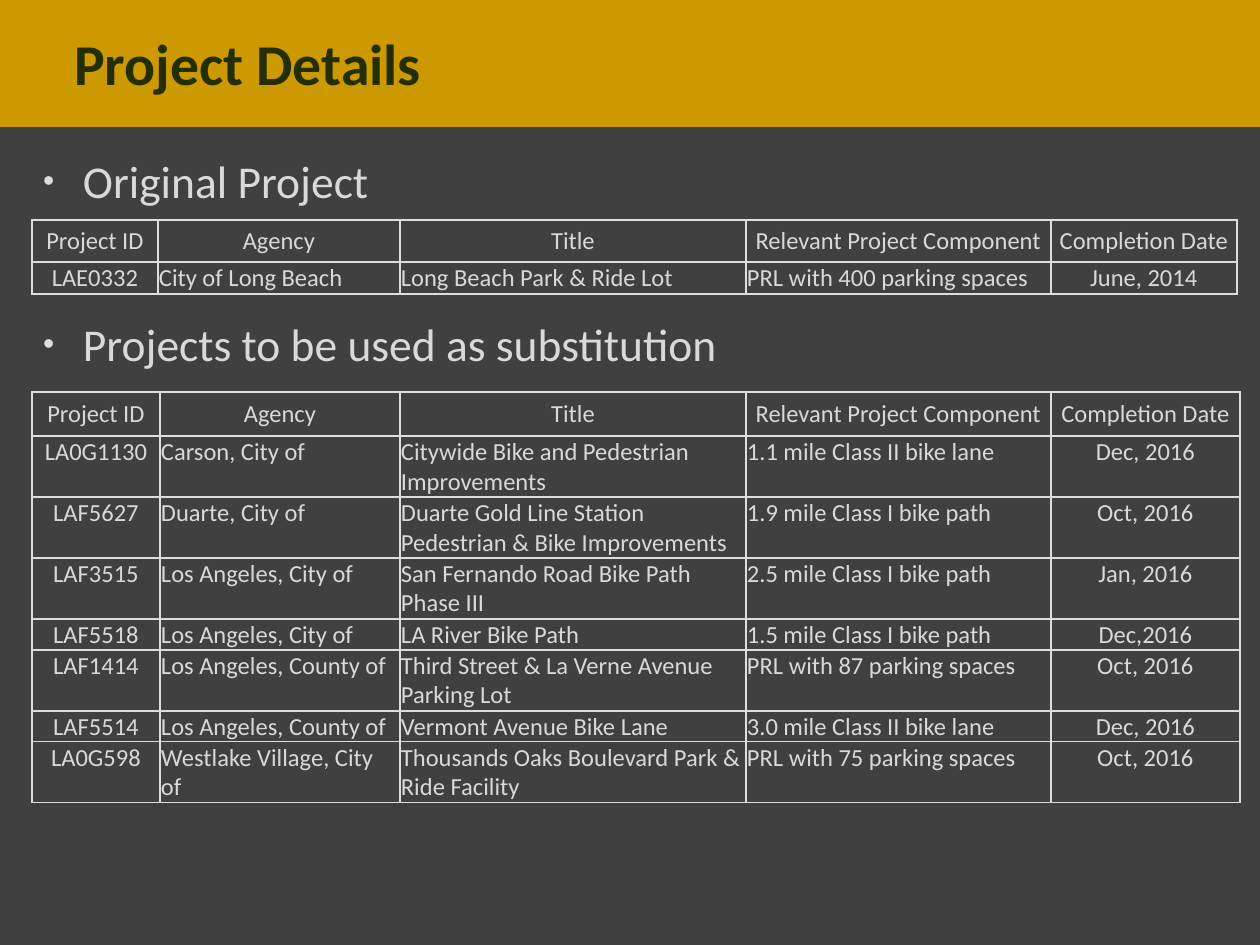
from dataclasses import dataclass

from lxml.etree import SubElement
from pptx import Presentation
from pptx.dml.color import RGBColor as Rgb
from pptx.enum.shapes import MSO_SHAPE as Preset
from pptx.enum.text import MSO_ANCHOR as Anchor, PP_ALIGN as Align
from pptx.oxml.ns import qn
from pptx.util import Pt

EMU_PER_PX = 914400 // 126


@dataclass(frozen=True)
class Theme:
    font: str = "Calibri"
    background: str = "404040"
    band: str = "CC9900"
    heading: str = "242E03"
    body: str = "D9D9D9"
    rule: str = "DDDDDD"
    heading_size: int = 33
    bullet_size: int = 26
    cell_size: int = 14
    rule_width: int = 1


@dataclass(frozen=True)
class ProjectTable:
    left: int
    top: int
    columns: tuple[int, ...]
    heights: tuple[int, ...]
    projects: tuple[tuple[str, ...], ...]


THEME = Theme()
HEADER = ("Project ID", "Agency", "Title", "Relevant Project Component", "Completion Date")
CENTERED_COLUMNS = (0, 4)
ONE_LINE, TWO_LINES = 31, 61

ORIGINAL = ProjectTable(
    32, 220, (126, 242, 346, 305, 186), (42, 32),
    (("LAE0332", "City of Long Beach", "Long Beach Park & Ride Lot",
      "PRL with 400 parking spaces", "June, 2014"),),
)
SUBSTITUTES = ProjectTable(
    32, 392, (128, 240, 346, 305, 189),
    (44, TWO_LINES, TWO_LINES, TWO_LINES, ONE_LINE, TWO_LINES, ONE_LINE, TWO_LINES),
    (
        ("LA0G1130", "Carson, City of", "Citywide Bike and Pedestrian Improvements",
         "1.1 mile Class II bike lane", "Dec, 2016"),
        ("LAF5627", "Duarte, City of", "Duarte Gold Line Station Pedestrian & Bike Improvements",
         "1.9 mile Class I bike path", "Oct, 2016"),
        ("LAF3515", "Los Angeles, City of", "San Fernando Road Bike Path Phase III",
         "2.5 mile Class I bike path", "Jan, 2016"),
        ("LAF5518", "Los Angeles, City of", "LA River Bike Path",
         "1.5 mile Class I bike path", "Dec,2016"),
        ("LAF1414", "Los Angeles, County of", "Third Street & La Verne Avenue Parking Lot",
         "PRL with 87 parking spaces", "Oct, 2016"),
        ("LAF5514", "Los Angeles, County of", "Vermont Avenue Bike Lane",
         "3.0 mile Class II bike lane", "Dec, 2016"),
        ("LA0G598", "Westlake Village, City of", "Thousands Oaks Boulevard Park & Ride Facility",
         "PRL with 75 parking spaces", "Oct, 2016"),
    ),
)


def px(length: int) -> int:
    return length * EMU_PER_PX


def color(value: str) -> Rgb:
    return Rgb.from_string(value)


def write(paragraph, text: str, *, size: int, fill: str = THEME.body, bold: bool = False,
          align: Align = Align.LEFT, before: int = 0) -> None:
    paragraph.alignment = align
    paragraph.space_before = Pt(before)
    run = paragraph.add_run()
    run.text = text
    run.font.name = THEME.font
    run.font.size = Pt(size)
    run.font.bold = bold
    run.font.color.rgb = color(fill)


def add_bullet(paragraph, indent: int) -> None:
    properties = paragraph._p.get_or_add_pPr()
    properties.set("marL", str(px(indent)))
    properties.set("indent", str(-px(indent)))
    bullet_color = SubElement(properties, qn("a:buClr"))
    SubElement(bullet_color, qn("a:srgbClr"), val=THEME.rule)
    SubElement(properties, qn("a:buSzPct"), val="70000")
    SubElement(properties, qn("a:buFont"), typeface="Arial")
    SubElement(properties, qn("a:buChar"), char="•")


def set_margins(box, left: int, top: int, right: int, bottom: int) -> None:
    box.margin_left, box.margin_top = px(left), px(top)
    box.margin_right, box.margin_bottom = px(right), px(bottom)


def add_borders(cell) -> None:
    properties = cell._tc.get_or_add_tcPr()
    for position, side in enumerate(("lnL", "lnR", "lnT", "lnB")):
        border = SubElement(properties, qn(f"a:{side}"), w=str(Pt(THEME.rule_width)))
        fill = SubElement(border, qn("a:solidFill"))
        SubElement(fill, qn("a:srgbClr"), val=THEME.rule)
        properties.insert(position, border)


def draw_table(slide, spec_table: ProjectTable) -> None:
    rows = (HEADER, *spec_table.projects)
    table = slide.shapes.add_table(
        len(rows), len(HEADER), px(spec_table.left), px(spec_table.top),
        px(sum(spec_table.columns)), px(sum(spec_table.heights))).table
    table.first_row = table.horz_banding = False
    for column, width in zip(table.columns, spec_table.columns):
        column.width = px(width)
    for row_index, (row, height) in enumerate(zip(rows, spec_table.heights)):
        table.rows[row_index].height = px(height)
        is_header = row_index == 0
        for column_index, text in enumerate(row):
            cell = table.cell(row_index, column_index)
            set_margins(cell, 1, 1, 1, 0)
            cell.vertical_anchor = Anchor.MIDDLE if is_header else Anchor.TOP
            cell.fill.background()
            add_borders(cell)
            centered = is_header or column_index in CENTERED_COLUMNS
            write(cell.text_frame.paragraphs[0], text, size=THEME.cell_size,
                  align=Align.CENTER if centered else Align.LEFT)


def draw_heading(slide) -> None:
    band = slide.shapes.add_shape(Preset.RECTANGLE, 0, 0, px(1260), px(126))
    band.shadow.inherit = False
    band.fill.solid()
    band.fill.fore_color.rgb = color(THEME.band)
    band.line.color.rgb = color(THEME.band)
    band.line.width = Pt(0.75)

    title = slide.shapes.title
    title._element.addprevious(band._element)
    title.left, title.top, title.width, title.height = px(63), px(23), px(1197), px(94)
    frame = title.text_frame
    frame.vertical_anchor = Anchor.TOP
    set_margins(frame, 11, 5, 11, 5)
    write(frame.paragraphs[0], "Project Details", size=THEME.heading_size,
          fill=THEME.heading, bold=True)


def draw_bullets(slide) -> None:
    frame = slide.shapes.add_textbox(px(32), px(148), px(1207), px(683)).text_frame
    frame.word_wrap = True
    set_margins(frame, 11, 5, 11, 5)
    sections = (("Original Project", 0), ("Projects to be used as substitution", 62))
    for index, (section, before) in enumerate(sections):
        paragraph = frame.add_paragraph() if index else frame.paragraphs[0]
        write(paragraph, section, size=THEME.bullet_size, before=before)
        add_bullet(paragraph, 40)


def main() -> None:
    deck = Presentation()
    deck.slide_width, deck.slide_height = px(1260), px(945)
    slide = deck.slides.add_slide(deck.slide_layouts[5])
    slide.background.fill.solid()
    slide.background.fill.fore_color.rgb = color(THEME.background)
    draw_heading(slide)
    draw_bullets(slide)
    for projects in (ORIGINAL, SUBSTITUTES):
        draw_table(slide, projects)
    deck.save("out.pptx")


if __name__ == "__main__":
    main()
